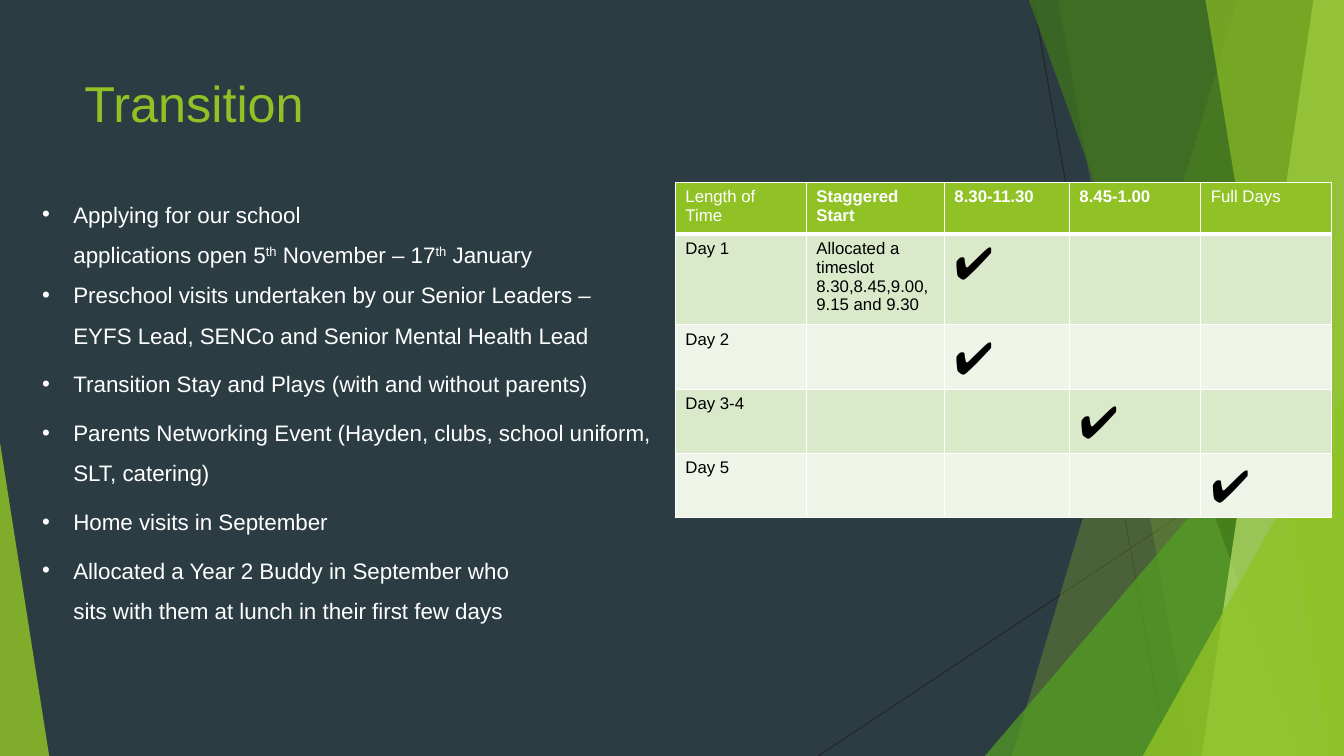
from lxml.etree import SubElement as Sub
from pptx import Presentation
from pptx.dml.color import RGBColor as Rgb
from pptx.enum.shapes import MSO_CONNECTOR as Link, MSO_SHAPE as Kind
from pptx.oxml.ns import qn
from pptx.util import Cm, Pt

WIDE, HIGH = 33.87, 19.05
WHITE, BLACK, LIME, DARK = "FFFFFF", "000000", "90C226", "2C3C43"
BANDS = ["DBE9CB", "EEF4E7"]
TICK = "✔"

LINES = [(26.04, 0, 29.41, HIGH), (WIDE, 10.24, 20.62, HIGH)]
BACK = [(31.19, 25.5, LIME, 29), (26.67, 30.05, LIME, 20)]
FRONT = [
    (25.93, 32.79, "3F7818", 69),
    (33.1, 30.28, "BFE471", 69),
    (30.38, 33.48, LIME, 64),
]

POINTS = [
    (0, ["Applying for our school", "\n", "applications open 5", "th",
         " November – 17", "th", " January"]),
    (0, ["Preschool visits undertaken by our Senior Leaders – "
         "EYFS Lead, SENCo and Senior Mental Health Lead"]),
    (6, ["Transition Stay and Plays (with and without parents)"]),
    (6, ["Parents Networking Event (Hayden, clubs, school uniform, SLT, catering)"]),
    (6, ["Home visits in September"]),
    (6, ["Allocated a Year 2 Buddy in September who", "\n",
         "sits with them at lunch in their first few days"]),
]

COLS = [3.3, 3.48, 3.15, 3.31, 3.3]
ROWS = [1.3, 2.27, 1.62, 1.62, 1.62]
HEAD = ["Length of Time", "Staggered Start", "8.30-11.30", "8.45-1.00", "Full Days"]
DAYS = [
    ["Day 1", "Allocated a timeslot 8.30,8.45,9.00, 9.15 and 9.30", TICK, "", ""],
    ["Day 2", "", TICK, "", ""],
    ["Day 3-4", "", "", TICK, ""],
    ["Day 5", "", "", "", TICK],
]


def paint(fill, tone, alpha=100):
    """Give a fill a solid colour and an opacity in percent."""
    fill.solid()
    fill.fore_color.rgb = Rgb.from_string(tone)
    if alpha < 100:
        node = fill._xPr.find(qn("a:solidFill"))[0]
        Sub(node, qn("a:alpha"), val=str(alpha * 1000))


def finish(shape, tone, alpha):
    """Fill a shape and take off its line and shadow."""
    paint(shape.fill, tone, alpha)
    shape.line.fill.background()
    shape.shadow.inherit = False


def add_line(slide, x1, y1, x2, y2):
    """Draw a thin dark line."""
    line = slide.shapes.add_connector(Link.STRAIGHT, Cm(x1), Cm(y1), Cm(x2), Cm(y2))
    line.line.width = Pt(0.75)
    paint(line.line.fill, "262626")
    Sub(line._element.spPr, qn("a:effectLst"))


def add_shard(slide, top, base, tone, alpha):
    """Draw a full-height panel that ends at the right edge."""
    pen = slide.shapes.build_freeform(Cm(top), 0)
    pen.add_line_segments(
        [(Cm(WIDE), 0), (Cm(WIDE), Cm(HIGH)), (Cm(base), Cm(HIGH))], close=True)
    finish(pen.convert_to_shape(), tone, alpha)


def add_peak(slide, left, top, right, tip, tone, alpha):
    """Draw a triangle that stands on the bottom edge."""
    peak = slide.shapes.add_shape(
        Kind.ISOSCELES_TRIANGLE, Cm(left), Cm(top), Cm(right - left), Cm(HIGH - top))
    peak.adjustments[0] = tip
    finish(peak, tone, alpha)


def add_run(para, text, size, tone, face="Arial", bold=False):
    """Add one styled run, and raise an ordinal ending."""
    run = para.add_run()
    run.text = text
    font = run.font
    font.size, font.name, font.bold = Pt(size), face, bold
    font.color.rgb = Rgb.from_string(tone)
    if text == "th":
        font._element.set("baseline", "30000")


def add_box(slide, left, top, width, height):
    """Add a wrapping text box and return its frame."""
    box = slide.shapes.add_textbox(Cm(left), Cm(top), Cm(width), Cm(height))
    box.text_frame.word_wrap = True
    return box.text_frame


def add_point(para, gap, parts):
    """Write one bulleted paragraph."""
    para.line_spacing, para.space_before = 1.5, Pt(gap)
    props = para._p.get_or_add_pPr()
    props.set("marL", str(Cm(0.79)))
    props.set("indent", str(-Cm(0.79)))
    Sub(Sub(props, qn("a:buClr")), qn("a:srgbClr"), val=WHITE)
    Sub(props, qn("a:buFont"), typeface="Arial")
    Sub(props, qn("a:buChar"), char="•")
    for part in parts:
        if part == "\n":
            para.add_line_break()
        else:
            add_run(para, part, 16, WHITE)


def add_edges(cell, top, base):
    """Draw the white borders of a cell."""
    props = cell._tc.get_or_add_tcPr()
    for side, width in zip("LRTB", (1, 1, top, base)):
        edge = Sub(props, qn(f"a:ln{side}"), w=str(Pt(width)))
        Sub(Sub(edge, qn("a:solidFill")), qn("a:srgbClr"), val=WHITE)


def fill_cell(cell, text, row, col):
    """Style one cell by its place in the table."""
    add_edges(cell, 3 if row == 1 else 1, 3 if row == 0 else 1)
    paint(cell.fill, BANDS[(row - 1) % 2] if row else LIME)
    para = cell.text_frame.paragraphs[0]
    if text == TICK:
        add_run(para, text, 32, BLACK, "Arial" if row == 1 else "Lato")
    elif text:
        bold = row == 0 and 0 < col < 4
        add_run(para, text, 12, BLACK if row else WHITE, bold=bold)


def add_plan(slide):
    """Add the table of start times."""
    frame = slide.shapes.add_table(
        len(ROWS), len(COLS), Cm(17.02), Cm(4.6), Cm(sum(COLS)), Cm(sum(ROWS)))
    table = frame.table
    for col, width in zip(table.columns, COLS):
        col.width = Cm(width)
    for row, height in zip(table.rows, ROWS):
        row.height = Cm(height)
    for r, texts in enumerate([HEAD] + DAYS):
        for c, text in enumerate(texts):
            fill_cell(table.cell(r, c), text, r, c)


def add_decor(slide):
    """Draw the lines and green panels behind the content."""
    for ends in LINES:
        add_line(slide, *ends)
    for shard in BACK:
        add_shard(slide, *shard)
    add_peak(slide, 24.82, 8.46, WIDE, 1, "54A021", 71)
    for shard in FRONT:
        add_shard(slide, *shard)
    add_peak(slide, 28.8, 9.98, WIDE, 1, LIME, 80)
    add_peak(slide, 0, 11.15, 1.24, 0, LIME, 84)


def main():
    """Build and save the slide."""
    deck = Presentation()
    deck.slide_width, deck.slide_height = Cm(WIDE), Cm(HIGH)
    slide = deck.slides.add_slide(deck.slide_layouts[6])
    paint(slide.background.fill, DARK)
    add_decor(slide)
    title = add_box(slide, 1.88, 1.7, 23.88, 3.66)
    add_run(title.paragraphs[0], "Transition", 36, LIME)
    body = add_box(slide, 0.81, 4.6, 15.88, 11.7)
    for i, (gap, parts) in enumerate(POINTS):
        add_point(body.add_paragraph() if i else body.paragraphs[0], gap, parts)
    add_plan(slide)
    deck.save("out.pptx")


if __name__ == "__main__":
    main()
